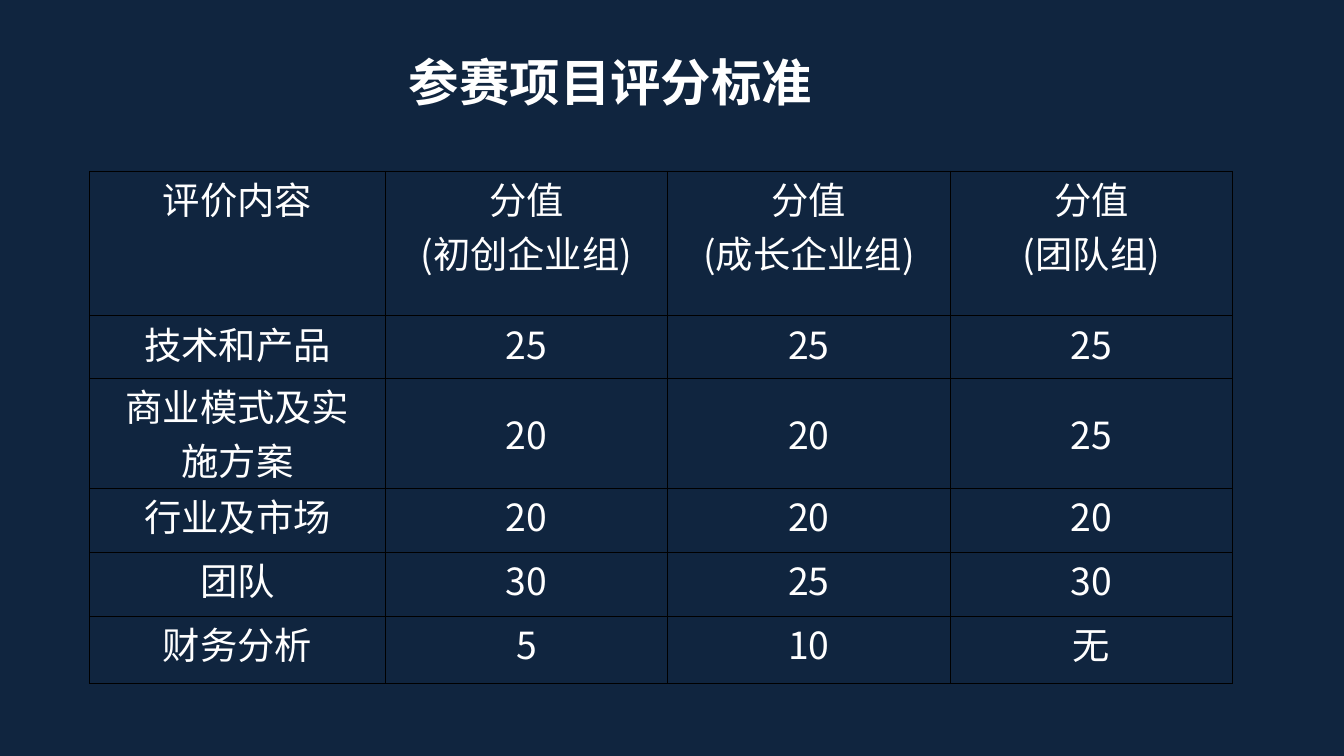
from lxml import etree
from pptx import Presentation
from pptx import util as u
from pptx.dml.color import RGBColor
from pptx.enum import text
from pptx.oxml import ns

WIDTH, HEIGHT = u.Inches(20), u.Inches(11.25)
NAVY, WHITE, BLACK = "10253F", "FFFFFF", "000000"
FONT = "Noto Sans CJK SC"

COLUMN_SHARES = [21.97, 21.03, 21.03, 21]
ROW_SHARES = [19.11, 8.24, 14.56, 8.49, 8.44, 8.89]
GROUPS = ["初创企业组", "成长企业组", "团队组"]
SCORES = [
    ("技术和产品", "25", "25", "25"),
    ("商业模式及实\n施方案", "20", "20", "25"),
    ("行业及市场", "20", "20", "20"),
    ("团队", "30", "25", "30"),
    ("财务分析", "5", "10", "无"),
]


def color(value):
    return RGBColor.from_string(value)


def across(share):
    """Turn a percentage of the slide's width into a length."""
    return u.Emu(round(WIDTH * share / 100))


def down(share):
    """Turn a percentage of the slide's height into a length."""
    return u.Emu(round(HEIGHT * share / 100))


def write(frame, content, size=40, bold=False, ink=WHITE):
    """Fill a text frame with one centred paragraph per line of content."""
    for index, line in enumerate(content.split("\n")):
        paragraph = frame.add_paragraph() if index else frame.paragraphs[0]
        paragraph.alignment = text.PP_ALIGN.CENTER
        run = paragraph.add_run()
        run.text = line
        run.font.size = u.Pt(size)
        run.font.bold = bold
        run.font.color.rgb = color(ink)
        run.font.name = FONT
        east_asian = etree.SubElement(run.font._element, ns.qn("a:ea"))
        east_asian.set("typeface", FONT)


class Deck:
    def __init__(self):
        self.presentation = Presentation()
        self.presentation.slide_width = WIDTH
        self.presentation.slide_height = HEIGHT
        self.slide = None

    def add_slide(self, background):
        self.slide = self.presentation.slides.add_slide(
            self.presentation.slide_layouts[6])
        fill = self.slide.background.fill
        fill.solid()
        fill.fore_color.rgb = color(background)

    def add_text(self, content, left, top, width, height, **style):
        box = self.slide.shapes.add_textbox(
            across(left), down(top), across(width), down(height))
        frame = box.text_frame
        frame.word_wrap = True
        frame.margin_left = frame.margin_right = u.Inches(0.2)
        frame.margin_top = frame.margin_bottom = u.Inches(0.1)
        write(frame, content, **style)

    def add_table(self, rows, left, top, columns, heights, middle_rows=()):
        frame = self.slide.shapes.add_table(
            len(rows), len(columns), across(left), down(top),
            across(sum(columns)), down(sum(heights)))
        table = frame.table
        table.first_row = table.horz_banding = False
        for column, share in zip(table.columns, columns):
            column.width = across(share)
        for row, share in zip(table.rows, heights):
            row.height = down(share)
        for r, values in enumerate(rows):
            for c, value in enumerate(values):
                cell = table.cell(r, c)
                cell.fill.background()
                cell.margin_left = cell.margin_right = u.Inches(0.08)
                cell.margin_top = cell.margin_bottom = 0
                if r in middle_rows and c:
                    cell.vertical_anchor = text.MSO_ANCHOR.MIDDLE
                write(cell.text_frame, value)
                self.add_borders(cell)

    def add_borders(self, cell, ink=BLACK, points=1):
        properties = cell._tc.get_or_add_tcPr()
        for index, side in enumerate(("lnL", "lnR", "lnT", "lnB")):
            line = etree.Element(ns.qn(f"a:{side}"), w=str(u.Pt(points)))
            fill = etree.SubElement(line, ns.qn("a:solidFill"))
            etree.SubElement(fill, ns.qn("a:srgbClr"), val=ink)
            properties.insert(index, line)

    def save(self):
        self.presentation.save("out.pptx")


def main():
    deck = Deck()
    deck.add_slide(NAVY)
    header = ["评价内容"] + [f"分值\n({group})" for group in GROUPS]
    deck.add_table([header, *SCORES], 6.68, 22.67, COLUMN_SHARES, ROW_SHARES,
                   middle_rows=(2,))
    deck.add_text("参赛项目评分标准", 9.85, 5.87, 71.15, 9.87,
                  size=54, bold=True)
    deck.save()


if __name__ == "__main__":
    main()
